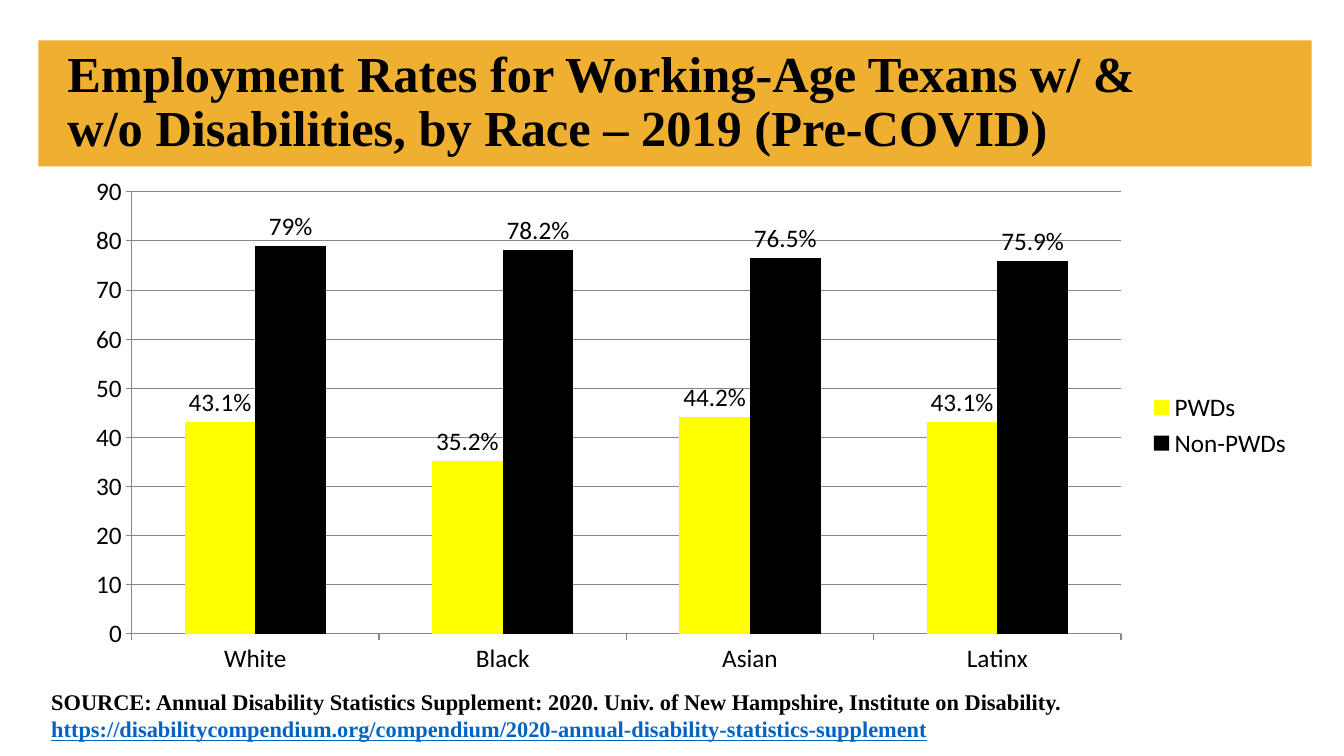
from pptx import Presentation
from pptx.chart.data import CategoryChartData
from pptx.dml.color import RGBColor
from pptx.enum.chart import XL_CHART_TYPE as CT, XL_LABEL_POSITION as LP
from pptx.enum.chart import XL_LEGEND_POSITION as LEG, XL_TICK_MARK as TICK
from pptx.enum.shapes import MSO_SHAPE as SHAPE
from pptx.enum.text import MSO_ANCHOR as ANCHOR
from pptx.util import Emu, Pt

PX = 9144
COLORS = {"band": "EFAF30", "ink": "000000", "pwd": "FFFF00",
          "link": "0563C1", "grid": "878787"}
RACES = ["White", "Black", "Asian", "Latinx"]
SERIES = [("PWDs", "pwd", [43.1, 35.2, 44.2, 43.1]),
          ("Non-PWDs", "ink", [79, 78.2, 76.5, 75.9])]


def px(*lengths):
    return [Emu(n * PX) for n in lengths]


def rgb(name):
    return RGBColor.from_string(COLORS[name])


def style_font(font, size, name, color="ink", bold=False, underline=False):
    font.size, font.name = Pt(size), name
    font.bold, font.underline = bold, underline
    font.color.rgb = rgb(color)


def add_text(slide, box, lines, size, anchor=ANCHOR.TOP, spacing=1.0):
    tf = slide.shapes.add_textbox(*px(*box)).text_frame
    tf.word_wrap = True
    tf.vertical_anchor = anchor
    for i, (text, fmt) in enumerate(lines):
        p = tf.paragraphs[0] if i == 0 else tf.add_paragraph()
        p.line_spacing = spacing
        r = p.add_run()
        r.text = text
        style_font(r.font, size, "Times New Roman", bold=True, **fmt)


def add_title(slide, box):
    x, y, w, h = box
    sp = slide.shapes.add_shape(SHAPE.RECTANGLE, *px(*box))
    sp.shadow.inherit = False
    sp.fill.solid()
    sp.fill.fore_color.rgb = rgb("band")
    sp.line.fill.background()
    title = ("Employment Rates for Working-Age Texans w/ & "
             "w/o Disabilities, by Race – 2019 (Pre-COVID)")
    add_text(slide, (x + 19, y, w - 113, h), [(title, {})], 36,
             ANCHOR.MIDDLE, 0.9)


def add_rates_chart(slide, box):
    data = CategoryChartData()
    data.categories = RACES
    for name, _, values in SERIES:
        data.add_series(name, values)
    chart = slide.shapes.add_chart(CT.COLUMN_CLUSTERED, *px(*box), data).chart
    style_font(chart.font, 18, "Calibri")
    chart.has_title = False
    chart.has_legend = True
    chart.legend.position = LEG.RIGHT
    chart.legend.include_in_layout = False

    val_axis = chart.value_axis
    val_axis.minimum_scale, val_axis.maximum_scale = 0, 90
    val_axis.major_unit = 10
    val_axis.has_major_gridlines = True
    for axis in (chart.category_axis, val_axis):
        axis.major_tick_mark = TICK.OUTSIDE
        axis.minor_tick_mark = TICK.NONE
    for part in (chart.category_axis, val_axis, val_axis.major_gridlines):
        part.format.line.color.rgb = rgb("grid")
        part.format.line.width = Pt(0.75)

    plot = chart.plots[0]
    plot.vary_by_categories = False
    plot.gap_width, plot.overlap = 150, 0
    for series, (_, color, _) in zip(plot.series, SERIES):
        series.format.fill.solid()
        series.format.fill.fore_color.rgb = rgb(color)
        labels = series.data_labels
        labels.show_value = True
        labels.position = LP.OUTSIDE_END
        labels.number_format = 'General"%"'
        labels.number_format_is_linked = False
        style_font(labels.font, 18, "Calibri")


def add_source(slide, box):
    add_text(slide, box, [
        ("SOURCE: Annual Disability Statistics Supplement: 2020. "
         "Univ. of New Hampshire, Institute on Disability.", {}),
        ("https://disabilitycompendium.org/compendium/"
         "2020-annual-disability-statistics-supplement",
         {"color": "link", "underline": True})], 16)


def main():
    prs = Presentation()
    prs.slide_width, prs.slide_height = px(1333, 750)
    slide = prs.slides.add_slide(prs.slide_layouts[6])
    add_title(slide, (38, 40, 1263, 125))
    add_source(slide, (41, 678, 1292, 72))
    add_rates_chart(slide, (71, 165, 1221, 514))
    prs.save("out.pptx")


if __name__ == "__main__":
    main()
